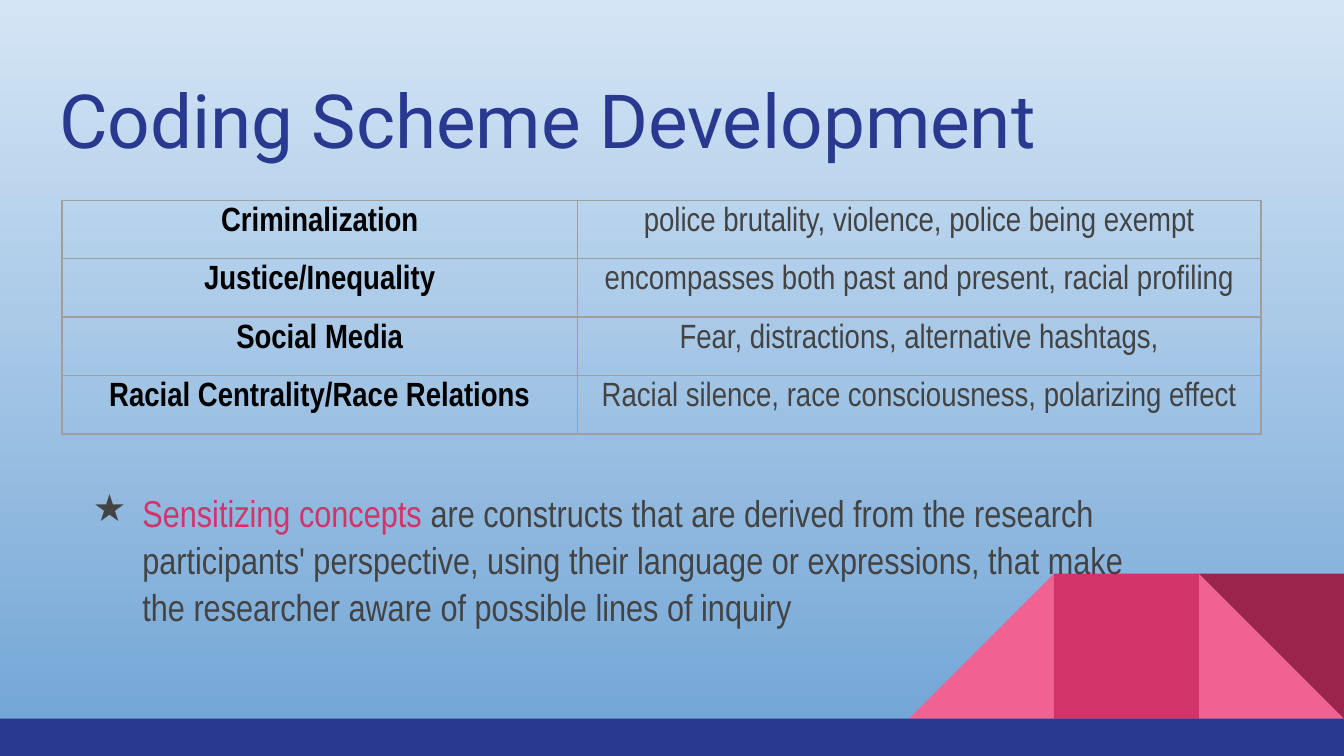
from dataclasses import dataclass

from pptx import Presentation
from pptx import util as u
from pptx.dml.color import RGBColor
from pptx.enum import shapes, text
from pptx.oxml import parse_xml
from pptx.oxml.ns import nsdecls


@dataclass(frozen=True)
class Theme:
    sky_top: str = "D4E5F5"
    sky_bottom: str = "70A4D5"
    navy: str = "2A3990"
    light_pink: str = "F06292"
    pink: str = "D23369"
    maroon: str = "9C254D"
    ink: str = "434343"
    black: str = "000000"
    border: str = "9E9E9E"
    heading_font: str = "Roboto"
    body_font: str = "Arial Narrow"
    title_size: float = 40
    table_size: float = 18
    body_size: float = 20


THEME = Theme()
WIDTH, HEIGHT = 720, 405
INSET = 7.2

CODES = [
    ("Criminalization", "police brutality, violence, police being exempt"),
    ("Justice/Inequality", "encompasses both past and present, racial profiling"),
    ("Social Media", "Fear, distractions, alternative hashtags,"),
    ("Racial Centrality/Race Relations",
     "Racial silence, race consciousness, polarizing effect"),
]
TERM = "Sensitizing concepts "
DEFINITION = (
    "are constructs that are derived from the research participants' "
    "perspective, using their language or expressions, that make the "
    "researcher aware of possible lines of inquiry"
)


def points(*lengths):
    return [u.Pt(length) for length in lengths]


def apply(target, formats):
    for name, value in formats.items():
        setattr(target, name, value)


def add_run(paragraph, words, font, size, color, bold=False):
    run = paragraph.add_run()
    run.text = words
    apply(run.font, {"name": font, "size": u.Pt(size), "bold": bold})
    run.font.color.rgb = RGBColor.from_string(color)


def format_frame(frame):
    apply(frame, {
        "word_wrap": True,
        "auto_size": text.MSO_AUTO_SIZE.NONE,
        "vertical_anchor": text.MSO_ANCHOR.TOP,
        **{f"margin_{side}": u.Pt(INSET)
           for side in ("left", "right", "top", "bottom")},
    })


def paint_background(slide):
    fill = slide.background.fill
    fill.gradient()
    fill.gradient_angle = 270
    for stop, color in zip(fill.gradient_stops, (THEME.sky_top, THEME.sky_bottom)):
        stop.color.rgb = RGBColor.from_string(color)


def add_block(slide, kind, box, color, rotation=0):
    block = slide.shapes.add_shape(kind, *points(*box))
    block.rotation = rotation
    block.shadow.inherit = False
    block.fill.solid()
    block.fill.fore_color.rgb = RGBColor.from_string(color)
    block.line.fill.background()


def add_footer(slide, box):
    """Navy band along the bottom, with a row of square tiles above it."""
    left, top, width, height = box
    tile, band = 77.7, 20
    tile_top = top + height - band - tile
    triangle = shapes.MSO_SHAPE.RIGHT_TRIANGLE
    rectangle = shapes.MSO_SHAPE.RECTANGLE
    # Column from the left, shape, colour, rotation
    for column, kind, color, rotation in (
        (2, triangle, THEME.light_pink, 0),
        (0, triangle, THEME.light_pink, 270),
        (1, rectangle, THEME.pink, 0),
        (2, triangle, THEME.maroon, 180),
    ):
        tile_left = left + width - (3 - column) * tile
        add_block(slide, kind, (tile_left, tile_top, tile, tile), color, rotation)
    add_block(slide, rectangle, (left, top + height - band, width, band), THEME.navy)


def place_title(slide, box):
    title = slide.shapes.title
    apply(title, dict(zip(("left", "top", "width", "height"), points(*box))))
    format_frame(title.text_frame)
    heading = title.text_frame.paragraphs[0]
    heading.alignment = text.PP_ALIGN.LEFT
    add_run(heading, "Coding Scheme Development", THEME.heading_font,
            THEME.title_size, THEME.navy)


def outline_cell(cell):
    properties = cell._tc.get_or_add_tcPr()
    for position, side in enumerate("LRTB"):
        properties.insert(position, parse_xml(
            f'<a:ln{side} {nsdecls("a")} w="{u.Pt(0.75)}"><a:solidFill>'
            f'<a:srgbClr val="{THEME.border}"/></a:solidFill></a:ln{side}>'))


def add_code_table(slide, box):
    """Codes in bold on the left, what each one covers on the right."""
    codes = slide.shapes.add_table(len(CODES), 2, *points(*box)).table
    apply(codes, {"first_row": False, "horz_banding": False})
    for column, share in zip(codes.columns, (0.43, 0.57)):
        column.width = u.Pt(box[2] * share)
    for row, entry in zip(codes.rows, CODES):
        row.height = u.Pt(box[3] / len(CODES))
        for cell, words, color, bold in zip(
                row.cells, entry, (THEME.black, THEME.ink), (True, False)):
            cell.fill.background()
            outline_cell(cell)
            apply(cell, {"margin_left": u.Pt(INSET), "margin_right": u.Pt(INSET),
                         "margin_top": u.Pt(3.6), "margin_bottom": u.Pt(3.6)})
            paragraph = cell.text_frame.paragraphs[0]
            paragraph.alignment = text.PP_ALIGN.CENTER
            add_run(paragraph, words, THEME.body_font, THEME.table_size, color, bold)


def add_definition(slide, box):
    """Starred paragraph that defines the highlighted term."""
    frame = slide.shapes.add_textbox(*points(*box)).text_frame
    format_frame(frame)
    paragraph = frame.paragraphs[0]
    apply(paragraph, {"line_spacing": 1.05, "space_after": u.Pt(5)})
    properties = paragraph._p.get_or_add_pPr()
    properties.set("marL", str(u.Pt(36)))
    properties.set("indent", str(u.Pt(-26.6)))
    for bullet in (
        f'<a:buClr {nsdecls("a")}><a:srgbClr val="{THEME.ink}"/></a:buClr>',
        f'<a:buChar {nsdecls("a")} char="★"/>',
    ):
        properties.append(parse_xml(bullet))
    for words, color in ((TERM, THEME.pink), (DEFINITION, THEME.ink)):
        add_run(paragraph, words, THEME.body_font, THEME.body_size, color)


def main():
    deck = Presentation()
    apply(deck, {"slide_width": u.Pt(WIDTH), "slide_height": u.Pt(HEIGHT)})
    slide = deck.slides.add_slide(deck.slide_layouts.get_by_name("Title Only"))
    paint_background(slide)
    add_footer(slide, (0, 0, WIDTH, HEIGHT))
    place_title(slide, (24.5, 32.4, 671, 47.5))
    add_code_table(slide, (33.2, 107.3, 642.4, 125.2))
    add_definition(slide, (33.2, 254.2, 600, 47.5))
    deck.save("out.pptx")


if __name__ == "__main__":
    main()
